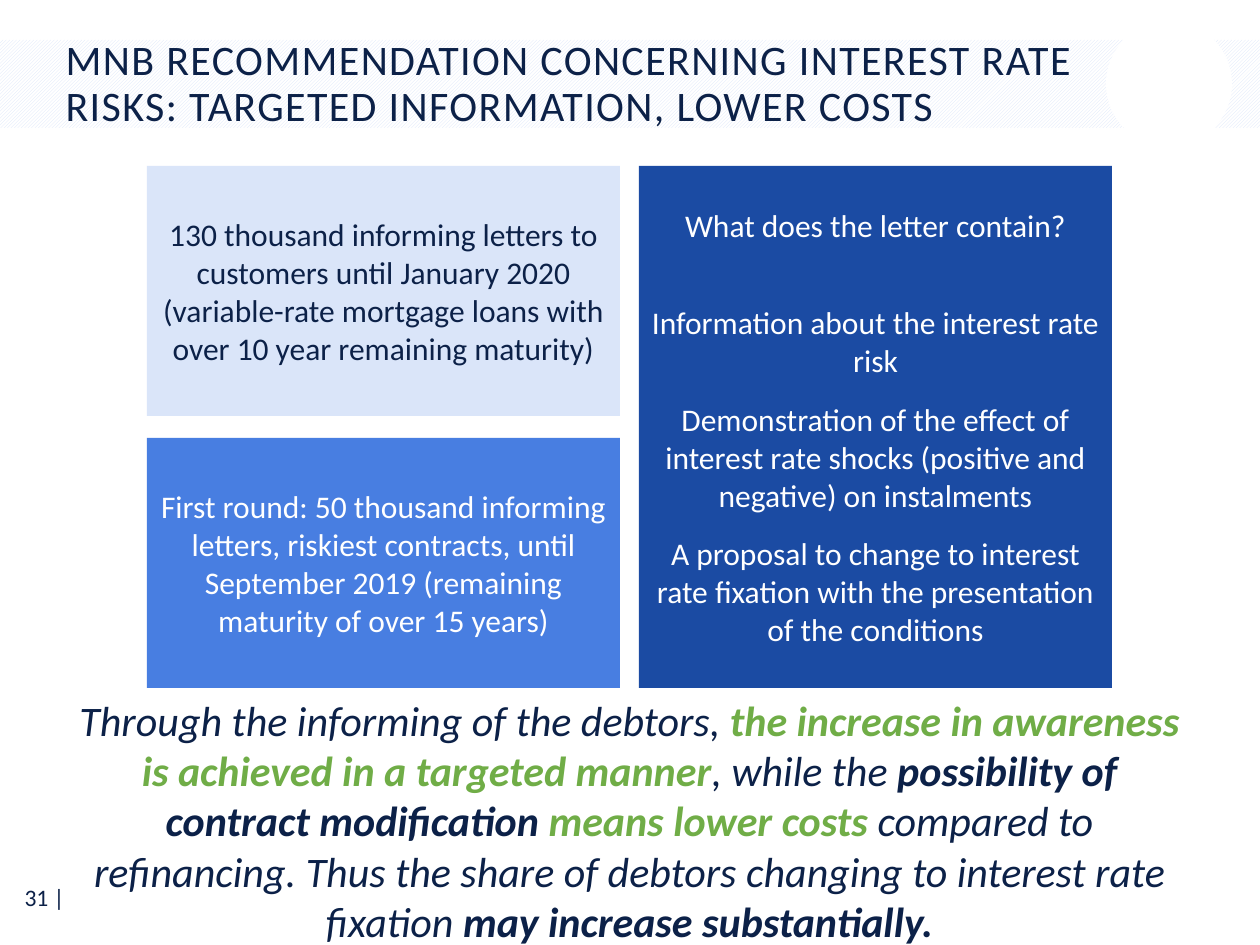
from pptx import Presentation
from pptx import util as u
from pptx.dml.color import RGBColor
from pptx.enum import dml, shapes, text

NAVY = RGBColor(0x0C, 0x21, 0x48)
PALE = RGBColor(0xDA, 0xE5, 0xF9)
MID_BLUE = RGBColor(0x48, 0x7E, 0xE1)
DEEP_BLUE = RGBColor(0x1B, 0x4B, 0xA3)
GREEN = RGBColor(0x70, 0xAD, 0x47)
WHITE = RGBColor(0xFF, 0xFF, 0xFF)
SCALE = u.Inches(1) / 126

CENTER = text.PP_ALIGN.CENTER
LEFT = text.PP_ALIGN.LEFT
RIGHT = text.PP_ALIGN.RIGHT
MIDDLE = text.MSO_ANCHOR.MIDDLE
TOP = text.MSO_ANCHOR.TOP


def px(length):
    return u.Emu(round(length * SCALE))


def apply(target, values):
    for name, value in values.items():
        setattr(target, name, value)


class SlideBuilder:
    font_name = "Calibri"

    def __init__(self, presentation):
        self.slide = presentation.slides.add_slide(presentation.slide_layouts[5])

    def set_text(self, shape, paragraphs, size, color, align=CENTER, anchor=MIDDLE, **paragraph_format):
        frame = shape.text_frame
        apply(frame, dict(word_wrap=True, auto_size=text.MSO_AUTO_SIZE.NONE, vertical_anchor=anchor))
        for index, (runs, space_after) in enumerate(paragraphs):
            paragraph = frame.add_paragraph() if index else frame.paragraphs[0]
            apply(paragraph, dict(alignment=align, space_after=u.Pt(space_after), **paragraph_format))
            for content, style in runs:
                run = paragraph.add_run()
                run.text = content
                run.font.color.rgb = style.get("color", color)
                apply(run.font, dict(name=self.font_name, size=u.Pt(size),
                                     bold=style.get("bold", False),
                                     italic=style.get("italic", False)))

    def title(self, content, left, top, width, height):
        title = self.slide.shapes.title
        apply(title, dict(left=px(left), top=px(top), width=px(width), height=px(height)))
        self.set_text(title, [([(content, {})], 0)], 24, NAVY, LEFT, line_spacing=0.9)
        title.text_frame.paragraphs[0].runs[0].font._element.set("spc", "80")
        title.element.getparent().append(title.element)

    def shape(self, kind, left, top, width, height, color):
        shape = self.slide.shapes.add_shape(kind, px(left), px(top), px(width), px(height))
        shape.shadow.inherit = False
        shape.line.fill.background()
        shape.fill.solid()
        shape.fill.fore_color.rgb = color
        return shape

    def hatched_band(self, left, top, width, height):
        band = self.shape(shapes.MSO_SHAPE.RECTANGLE, left, top, width, height, PALE)
        band.fill.patterned()
        band.fill.pattern = dml.MSO_PATTERN.LIGHT_UPWARD_DIAGONAL
        band.fill.fore_color.rgb = PALE
        band.fill.back_color.rgb = WHITE

    def card(self, left, top, width, height, fill, color, paragraphs):
        card = self.shape(shapes.MSO_SHAPE.RECTANGLE, left, top, width, height, fill)
        self.set_text(card, [([(content, {})], after) for content, after in paragraphs], 18, color)

    def text_box(self, left, top, width, height, runs, size, align, anchor):
        box = self.slide.shapes.add_textbox(px(left), px(top), px(width), px(height))
        self.set_text(box, [(runs, 0)], size, NAVY, align, anchor)


def main():
    presentation = Presentation()
    apply(presentation, dict(slide_width=px(1260), slide_height=px(945)))
    builder = SlideBuilder(presentation)

    builder.text_box(1, 874, 76, 47, [("31 |", {})], 13.5, RIGHT, MIDDLE)
    builder.hatched_band(0, 40, 1260, 88)
    builder.shape(shapes.MSO_SHAPE.OVAL, 1106, 21, 126, 126, WHITE)
    builder.title("MNB RECOMMENDATION CONCERNING INTEREST RATE RISKS: "
                  "TARGETED INFORMATION, LOWER COSTS", 53, 43, 1062, 84)

    left, top, width, height = 147, 166, 473, 250
    column_gap, row_gap = 19, 22
    builder.card(left, top, width, height, PALE, NAVY, [
        ("130 thousand informing letters to customers until January 2020 "
         "(variable-rate mortgage loans with over 10 year remaining maturity)", 0)])
    builder.card(left, top + height + row_gap, width, height, MID_BLUE, WHITE, [
        ("First round: 50 thousand informing letters, riskiest contracts, "
         "until September 2019 (remaining maturity of over 15 years)", 0)])
    builder.card(left + width + column_gap, top, width, 2 * height + row_gap, DEEP_BLUE, WHITE, [
        ("What does the letter contain?", 34),
        ("Information about the interest rate risk", 12),
        ("Demonstration of the effect of interest rate shocks "
         "(positive and negative) on instalments", 12),
        ("A proposal to change to interest rate fixation with the "
         "presentation of the conditions", 12)])

    plain = dict(italic=True)
    strong = dict(italic=True, bold=True)
    highlight = dict(strong, color=GREEN)
    builder.text_box(60, 688, 1139, 267, [
        ("Through the informing of the debtors, ", plain),
        ("the increase in awareness is achieved in a targeted manner", highlight),
        (", while the ", plain),
        ("possibility of contract modification ", strong),
        ("means lower costs ", highlight),
        ("compared to refinancing. Thus the share of debtors changing to "
         "interest rate fixation ", plain),
        ("may increase substantially.", strong)], 24, CENTER, TOP)

    presentation.save("out.pptx")


if __name__ == "__main__":
    main()
